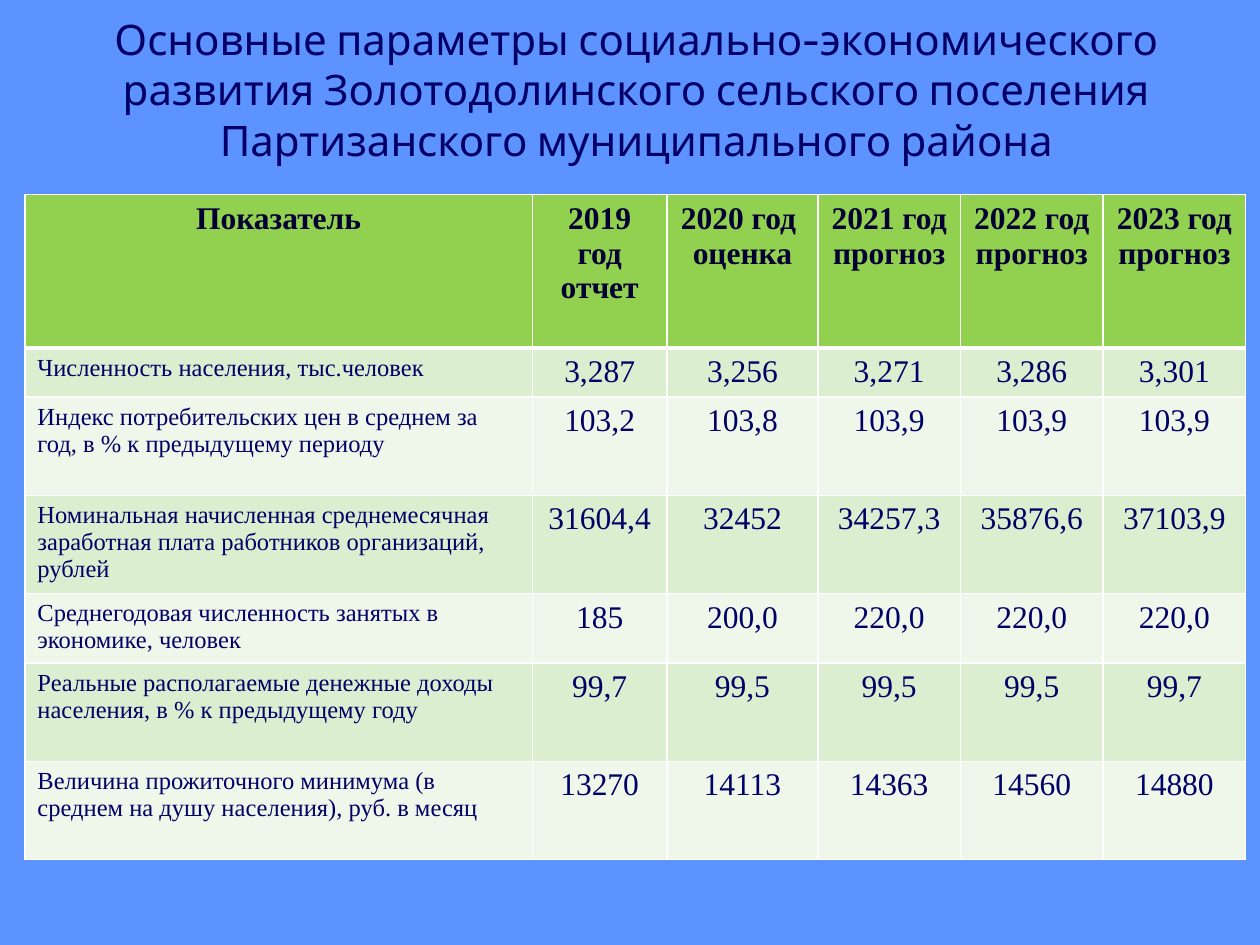
"""Builds a slide with a table of settlement development indicators."""
from lxml import etree
from pptx import Presentation
from pptx.dml.color import RGBColor
from pptx.enum.text import MSO_ANCHOR, MSO_AUTO_SIZE, PP_ALIGN
from pptx.oxml.ns import qn
from pptx.util import Pt

CENTER, LEFT = PP_ALIGN.CENTER, PP_ALIGN.LEFT
MIDDLE, NO_FIT = MSO_ANCHOR.MIDDLE, MSO_AUTO_SIZE.NONE
TITLE_ONLY = 5

HEADING = ("Основные параметры социально-экономического развития "
           "Золотодолинского сельского поселения Партизанского муниципального района")
HEADER = ["Показатель", "2019 год\nотчет", "2020 год \nоценка",
          "2021 год\nпрогноз", "2022 год прогноз", "2023 год прогноз"]
INDICATORS = [
    ["Численность населения, тыс.человек",
     "3,287", "3,256", "3,271", "3,286", "3,301"],
    ["Индекс потребительских цен в среднем за год, в % к предыдущему периоду",
     "103,2", "103,8", "103,9", "103,9", "103,9"],
    ["Номинальная начисленная среднемесячная заработная плата работников организаций, рублей",
     "31604,4", "32452", "34257,3", "35876,6", "37103,9"],
    ["Среднегодовая численность занятых в экономике, человек",
     "185", "200,0", "220,0", "220,0", "220,0"],
    ["Реальные располагаемые денежные доходы населения, в % к предыдущему году",
     "99,7", "99,5", "99,5", "99,5", "99,7"],
    ["Величина прожиточного минимума (в среднем на душу населения), руб. в месяц",
     "13270", "14113", "14363", "14560", "14880"],
]
COLUMN_WIDTHS = [290, 77, 86.2, 81.5, 81.5, 81.5]
ROW_HEIGHTS = [87.6, 28, 56.2, 56.2, 39.6, 56.2, 56.2]


def color(value):
    return RGBColor.from_string(value)


class IndicatorSlide:
    NAVY, WHITE, BACKGROUND = "000066", "FFFFFF", "5D93FF"
    HEADER_FILL, BANDS = "92D050", ("EEF7E9", "DCEED0")
    TITLE = {"name": "Cabin", "size": Pt(24), "bold": False}
    HEAD = {"name": "Times New Roman", "size": Pt(18), "bold": True}
    VALUE = {**HEAD, "bold": False}
    LABEL = {**VALUE, "size": Pt(14)}

    def __init__(self, deck):
        self.slide = deck.slides.add_slide(deck.slide_layouts[TITLE_ONLY])
        backdrop = self.slide.background.fill
        backdrop.solid()
        backdrop.fore_color.rgb = color(self.BACKGROUND)

    def put_text(self, frame, text, style, ink, align):
        frame.text = text
        for paragraph in frame.paragraphs:
            paragraph.alignment = align
            for run in paragraph.runs:
                for key, value in style.items():
                    setattr(run.font, key, value)
                run.font.color.rgb = color(ink)

    def title(self, text, left, top, width, height):
        heading = self.slide.shapes.title
        place = {"left": left, "top": top, "width": width, "height": height}
        for key, value in place.items():
            setattr(heading, key, Pt(value))
        frame = heading.text_frame
        for key, value in {"word_wrap": True, "auto_size": NO_FIT,
                           "vertical_anchor": MIDDLE}.items():
            setattr(frame, key, value)
        self.put_text(frame, text, self.TITLE, self.NAVY, CENTER)

    def borders(self, cell, row):
        properties = cell._tc.get_or_add_tcPr()
        widths = {"L": 1, "R": 1, "T": 3 if row == 1 else 1, "B": 3 if row == 0 else 1}
        for side, width in widths.items():
            line = etree.SubElement(properties, qn(f"a:ln{side}"), w=str(Pt(width)))
            solid = etree.SubElement(line, qn("a:solidFill"))
            etree.SubElement(solid, qn("a:srgbClr"), val=self.WHITE)

    def table(self, rows, left, top, widths, heights):
        grid = self.slide.shapes.add_table(
            len(rows), len(widths), Pt(left), Pt(top),
            Pt(sum(widths)), Pt(sum(heights))).table
        for column, width in zip(grid.columns, widths):
            column.width = Pt(width)
        for line, height in zip(grid.rows, heights):
            line.height = Pt(height)
        for r, texts in enumerate(rows):
            for c, text in enumerate(texts):
                cell = grid.cell(r, c)
                self.borders(cell, r)
                cell.fill.solid()
                cell.fill.fore_color.rgb = color(self.BANDS[r % 2] if r else self.HEADER_FILL)
                if r == 0:
                    look = self.HEAD, "000033", CENTER
                elif c == 0:
                    look = self.LABEL, self.NAVY, LEFT
                else:
                    look = self.VALUE, self.NAVY, CENTER
                self.put_text(cell.text_frame, text, *look)


def main():
    deck = Presentation()
    deck.slide_width, deck.slide_height = Pt(720), Pt(540)
    page = IndicatorSlide(deck)
    page.title(HEADING, 39.6, 0, 648, 101.5)
    page.table([HEADER] + INDICATORS, 14.2, 111.3, COLUMN_WIDTHS, ROW_HEIGHTS)
    deck.save("out.pptx")


if __name__ == "__main__":
    main()
